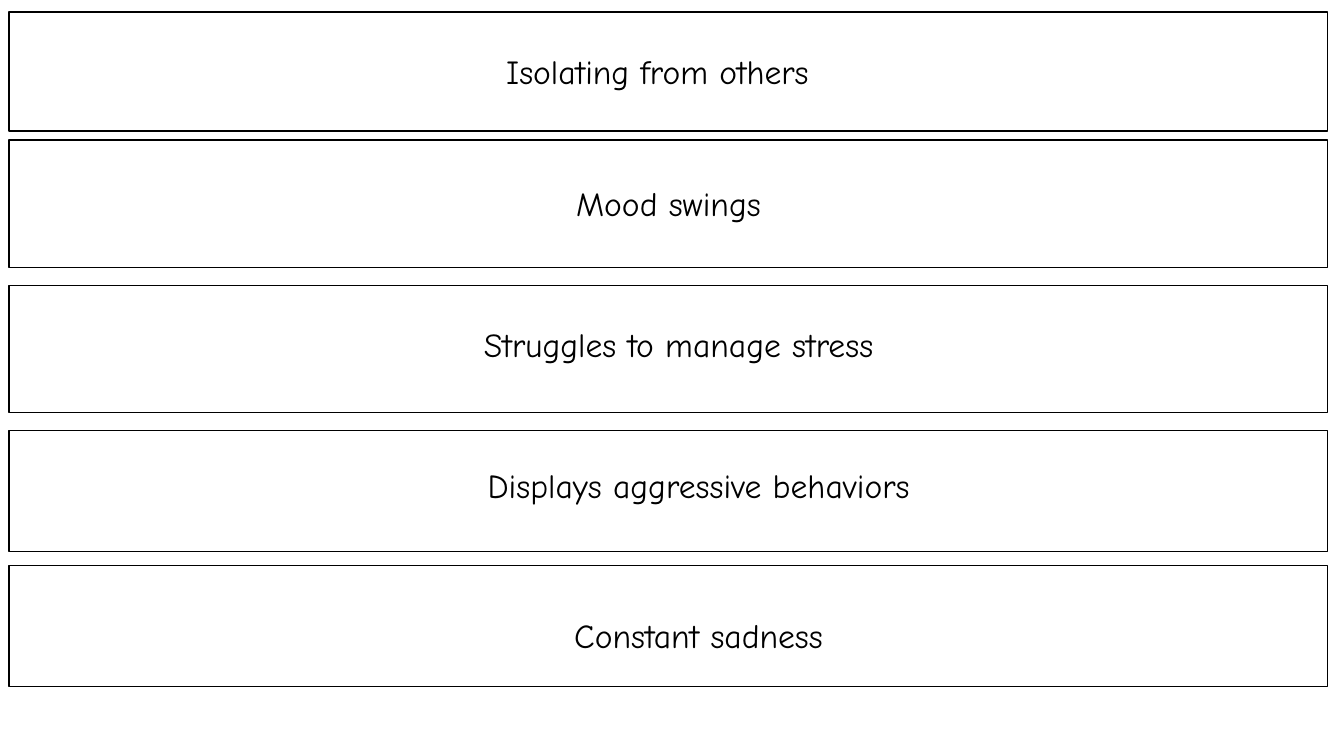
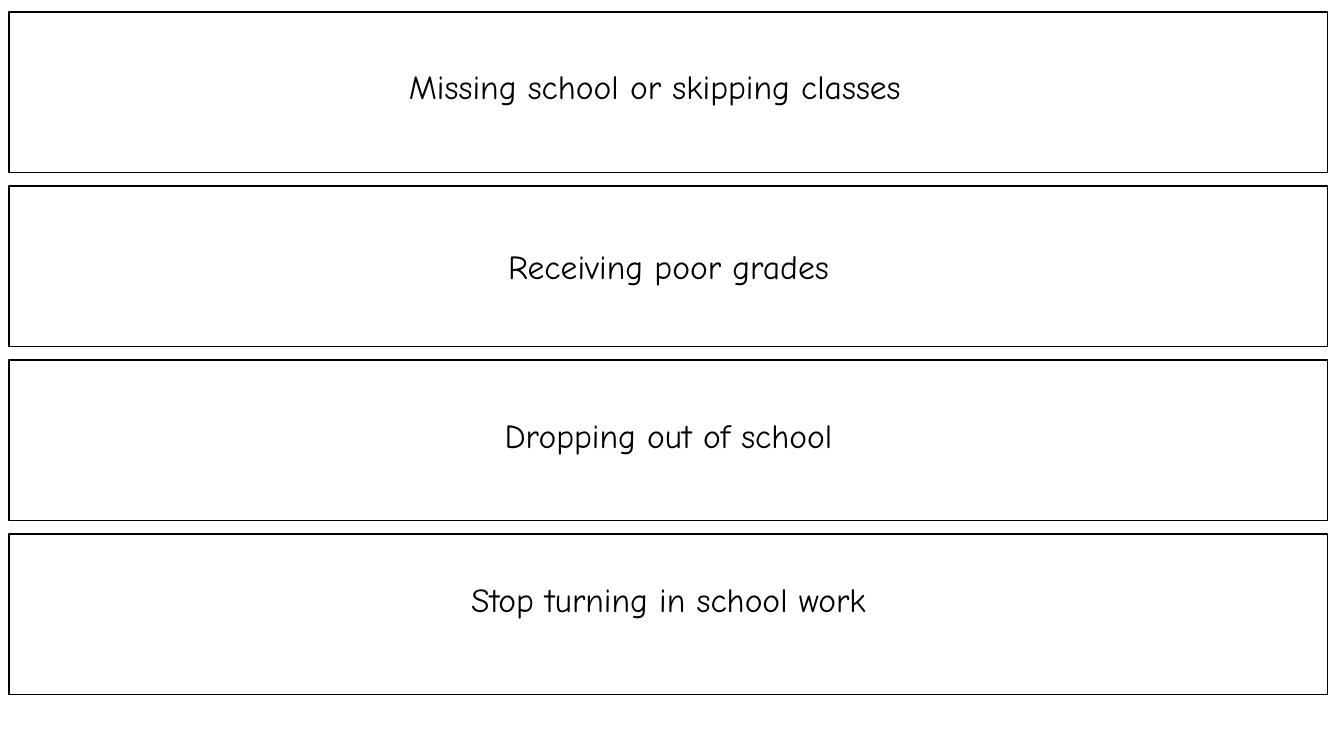
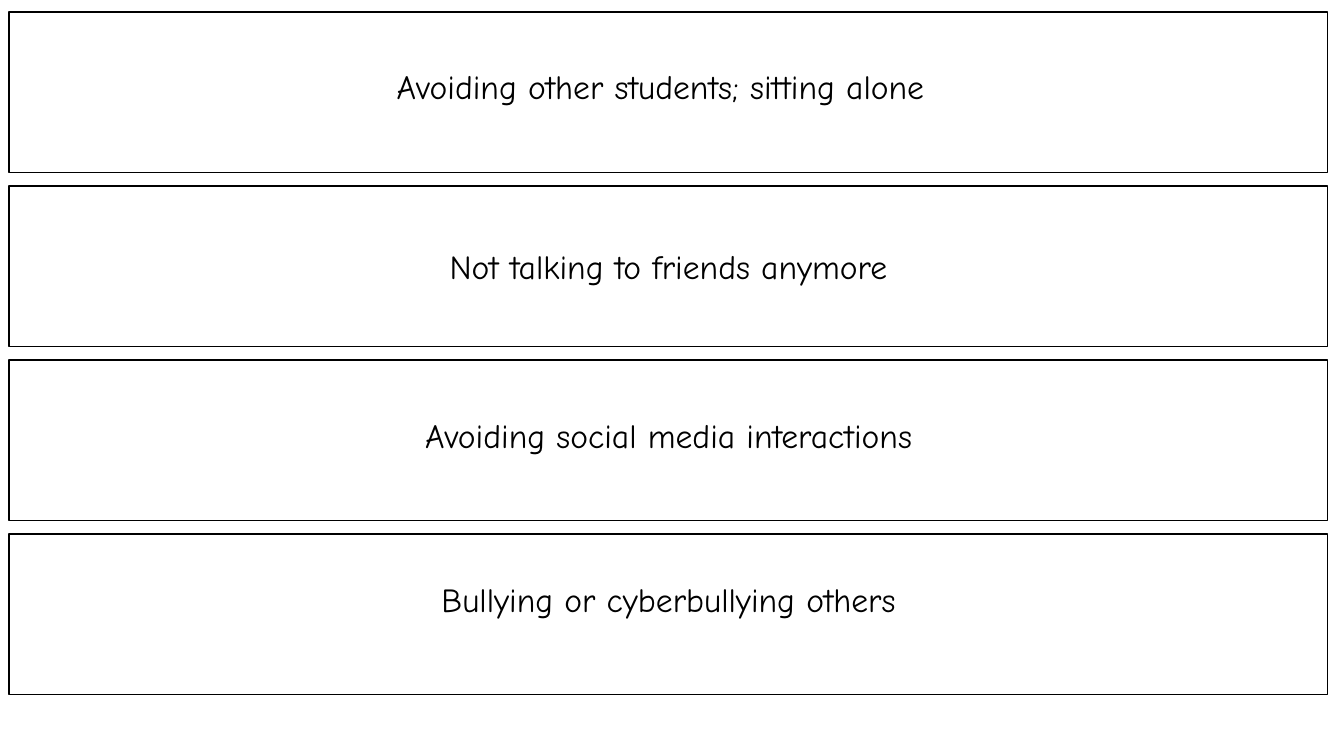
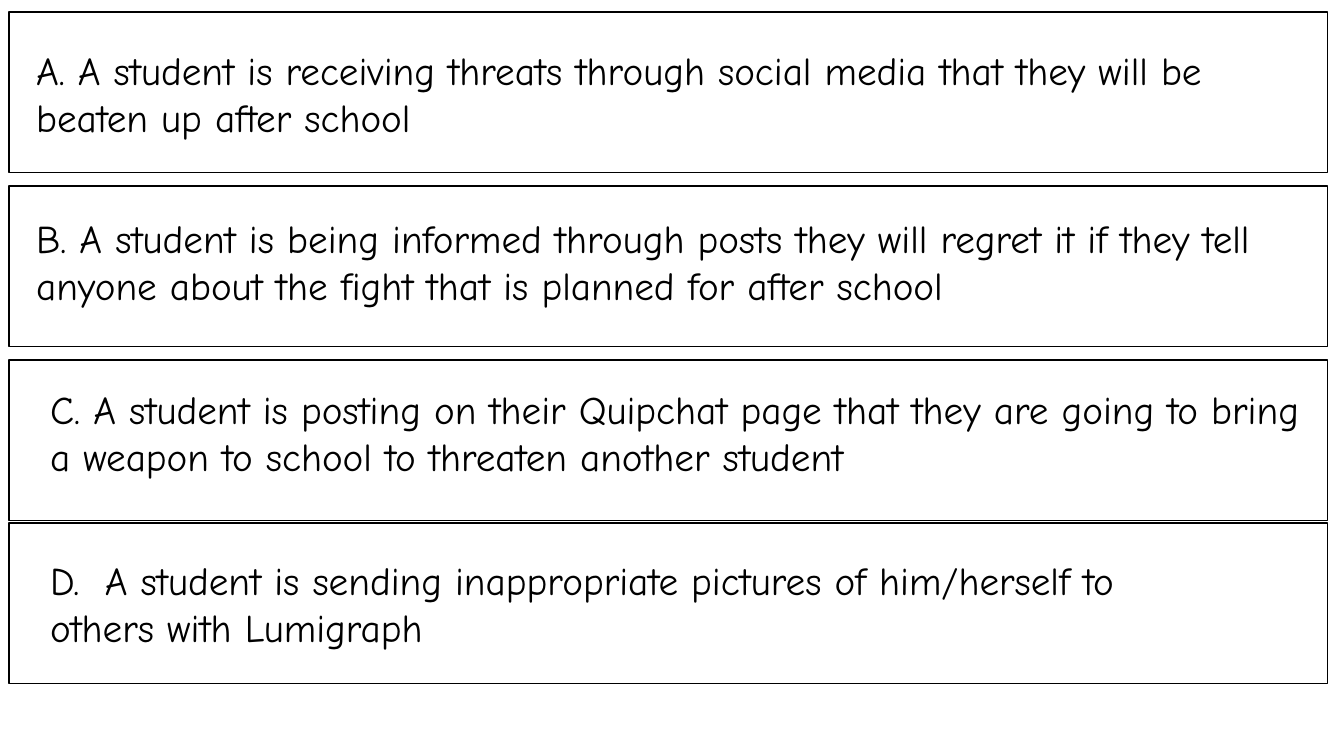
"""Build four slides of outlined cards on warning signs at school."""
from lxml import etree
from pptx import Presentation
from pptx.dml.color import RGBColor
from pptx.enum.shapes import MSO_SHAPE
from pptx.enum.text import MSO_AUTO_SIZE, PP_ALIGN
from pptx.oxml.ns import qn
from pptx.util import Pt

RECT = MSO_SHAPE.RECTANGLE
GROW = MSO_AUTO_SIZE.SHAPE_TO_FIT_TEXT
LEFT, CENTER = PP_ALIGN.LEFT, PP_ALIGN.CENTER
BLACK = RGBColor(0, 0, 0)
WHITE = RGBColor(255, 255, 255)
FONT = "Comic Neue"
EDGE, WIDE = 6.5, 941.8
FIRST, TALL, STEP = 8.6, 114.5, 124.3
BLANK = 6

tops = [FIRST + STEP * n for n in range(4)]
cards = [(top, TALL) for top in tops]
spots = [(72.7, 43.2, 798), (78.5, 172, 798), (78.5, 293, 798), (78.5, 410, 798)]
short = {"size": 24, "align": CENTER, "high": 36}
long = {"size": 28, "align": LEFT, "high": 75}

slides = [
    (short,
     [(FIRST, 85), (100, 91), (203.8, 91), (307.5, 86.4), (404, 86.4)],
     [(70.6, 33.1, 798), (78.5, 127.4, 798), (85.7, 227.5, 798),
      (100, 328.3, 798), (100, 435.6, 798)],
     ["Isolating from others",
      "Mood swings",
      "Struggles to manage stress",
      "Displays aggressive behaviors",
      "Constant sadness"]),
    (short, cards, spots,
     ["Missing school or skipping classes ",
      "Receiving poor grades",
      "Dropping out of school",
      "Stop turning in school work"]),
    (short, cards, spots,
     ["Avoiding other students; sitting alone",
      "Not talking to friends anymore",
      "Avoiding social media interactions",
      "Bullying or cyberbullying others"]),
    (long,
     cards[:3] + [(373.7, TALL)],
     [(18.7, 29.5, 918.7), (18.7, 149.8, 941.8), (28.8, 271.4, 918.7), (28.8, 393.8, 856)],
     ["A. A student is receiving threats through social media that they will be "
      "beaten up after school",
      "B. A student is being informed through posts they will regret it if they tell "
      "anyone about the fight that is planned for after school",
      "C. A student is posting on their Quipchat page that they are going to bring "
      "a weapon to school to threaten another student",
      "D.\tA student is sending inappropriate pictures of him/herself to "
      "others with Lumigraph"]),
]

deck = Presentation()
deck.slide_width, deck.slide_height = Pt(960), Pt(540)

for style, boxes, places, texts in slides:
    slide = deck.slides.add_slide(deck.slide_layouts[BLANK])
    for (top, tall), (x, y, width), text in zip(boxes, places, texts):
        card = slide.shapes.add_shape(RECT, Pt(EDGE), Pt(top), Pt(WIDE), Pt(tall))
        card.shadow.inherit = False
        card.fill.solid()
        card.fill.fore_color.rgb = WHITE
        card.line.color.rgb = BLACK
        card.line.width = Pt(1)

        label = slide.shapes.add_textbox(Pt(x), Pt(y), Pt(width), Pt(style["high"]))
        frame = label.text_frame
        frame.word_wrap = True
        frame.auto_size = GROW
        para = frame.paragraphs[0]
        para.alignment = style["align"]
        run = para.add_run()
        run.text = text
        run.font.color.rgb = BLACK
        for name, value in {"name": FONT, "size": Pt(style["size"])}.items():
            setattr(run.font, name, value)
        if "\t" in text:
            stops = etree.SubElement(para._p.get_or_add_pPr(), qn("a:tabLst"))
            etree.SubElement(stops, qn("a:tab"), pos=str(Pt(39)), algn="l")

deck.save("out.pptx")
